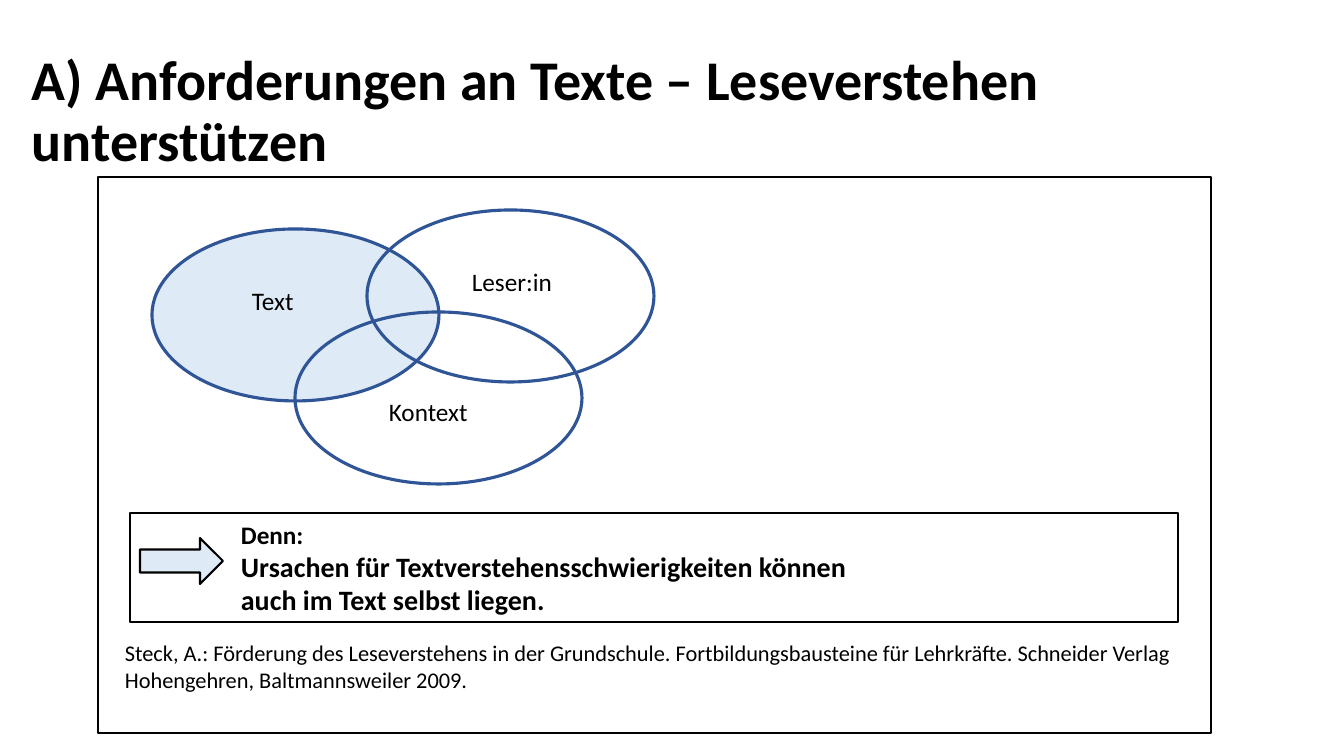
from pptx import Presentation
from pptx.dml.color import RGBColor
from pptx.enum.shapes import MSO_SHAPE
from pptx.enum.text import MSO_ANCHOR, PP_ALIGN
from pptx.util import Emu, Pt

RECT, OVAL, ARROW = MSO_SHAPE.RECTANGLE, MSO_SHAPE.OVAL, MSO_SHAPE.RIGHT_ARROW
TOP, MIDDLE = MSO_ANCHOR.TOP, MSO_ANCHOR.MIDDLE
LEFT = PP_ALIGN.LEFT

# Content: text lines are (wording, size in points, bold)
FONT = "Calibri"
COLORS = {"black": "000000", "white": "FFFFFF", "pale": "DEEBF7", "blue": "2F5597"}

TITLE = [("A) Anforderungen an Texte – Leseverstehen unterstützen", 40, True)]
FACTORS = [  # name, ellipse left and top, label left and top, fill
    ("Text", (152, 229), (242, 280), "pale"),
    ("Leser:in", (367, 210), (462, 261), None),
    ("Kontext", (295, 312), (379, 391), None),
]
REASON = [
    ("Denn:", 18, True),
    ("Ursachen für Textverstehensschwierigkeiten können", 20, True),
    ("auch im Text selbst liegen.", 20, True),
]
CITATION = [
    ("Steck, A.: Förderung des Leseverstehens in der Grundschule. "
     "Fortbildungsbausteine für Lehrkräfte. Schneider Verlag", 16, False),
    ("Hohengehren, Baltmannsweiler 2009.", 16, False),
]

# Geometry in px
SLIDE = (1344, 756)
TITLE_BOX = (22, 40, 1301, 146)
FRAME = (98, 177, 1113, 556)
ELLIPSE = (287, 172)
LABEL = (122, 51)
REASON_BOX = (130, 513, 1048, 109)
REASON_INDENT = 101
ARROW_BOX = (140, 538, 83, 46)
CITATION_BOX = (115, 634, 1080, 65)


def px(length):
    return Emu(round(length * 914400 / 100.8))


def color(name):
    return RGBColor.from_string(COLORS[name])


def write(shape, lines, anchor=TOP, indent=0, spacing=None):
    frame = shape.text_frame
    frame.word_wrap = True
    frame.vertical_anchor = anchor
    for number, (wording, size, bold) in enumerate(lines):
        paragraph = frame.add_paragraph() if number else frame.paragraphs[0]
        paragraph.alignment = LEFT
        if spacing:
            paragraph.line_spacing = spacing
        if indent:
            paragraph._p.get_or_add_pPr().set("marL", str(px(indent)))
        run = paragraph.add_run()
        run.text = wording
        run.font.name = FONT
        run.font.size = Pt(size)
        run.font.bold = bold
        run.font.color.rgb = color("black")


def add_text(box, lines, **style):
    write(slide.shapes.add_textbox(*map(px, box)), lines, **style)


def add_outline(kind, box, fill=None, line="black", width=1.5):
    shape = slide.shapes.add_shape(kind, *map(px, box))
    shape.shadow.inherit = False
    if fill:
        shape.fill.solid()
        shape.fill.fore_color.rgb = color(fill)
    else:
        shape.fill.background()
    shape.line.color.rgb = color(line)
    shape.line.width = Pt(width)
    return shape


deck = Presentation()
deck.slide_width, deck.slide_height = map(px, SLIDE)
slide = deck.slides.add_slide(deck.slide_layouts[6])

# Title and frame
add_text(TITLE_BOX, TITLE, anchor=MIDDLE, spacing=0.9)
add_outline(RECT, FRAME, fill="white")

# Overlapping factors, labels in front of all ellipses
for name, corner, label_corner, fill in FACTORS:
    add_outline(OVAL, corner + ELLIPSE, fill, "blue", 2.25)
for name, corner, label_corner, fill in FACTORS:
    add_text(label_corner + LABEL, [(name, 18, False)])

# Reason with arrow
add_outline(ARROW, ARROW_BOX, fill="pale")
write(add_outline(RECT, REASON_BOX), REASON, anchor=MIDDLE, indent=REASON_INDENT)

# Citation
add_text(CITATION_BOX, CITATION)

deck.save("out.pptx")
